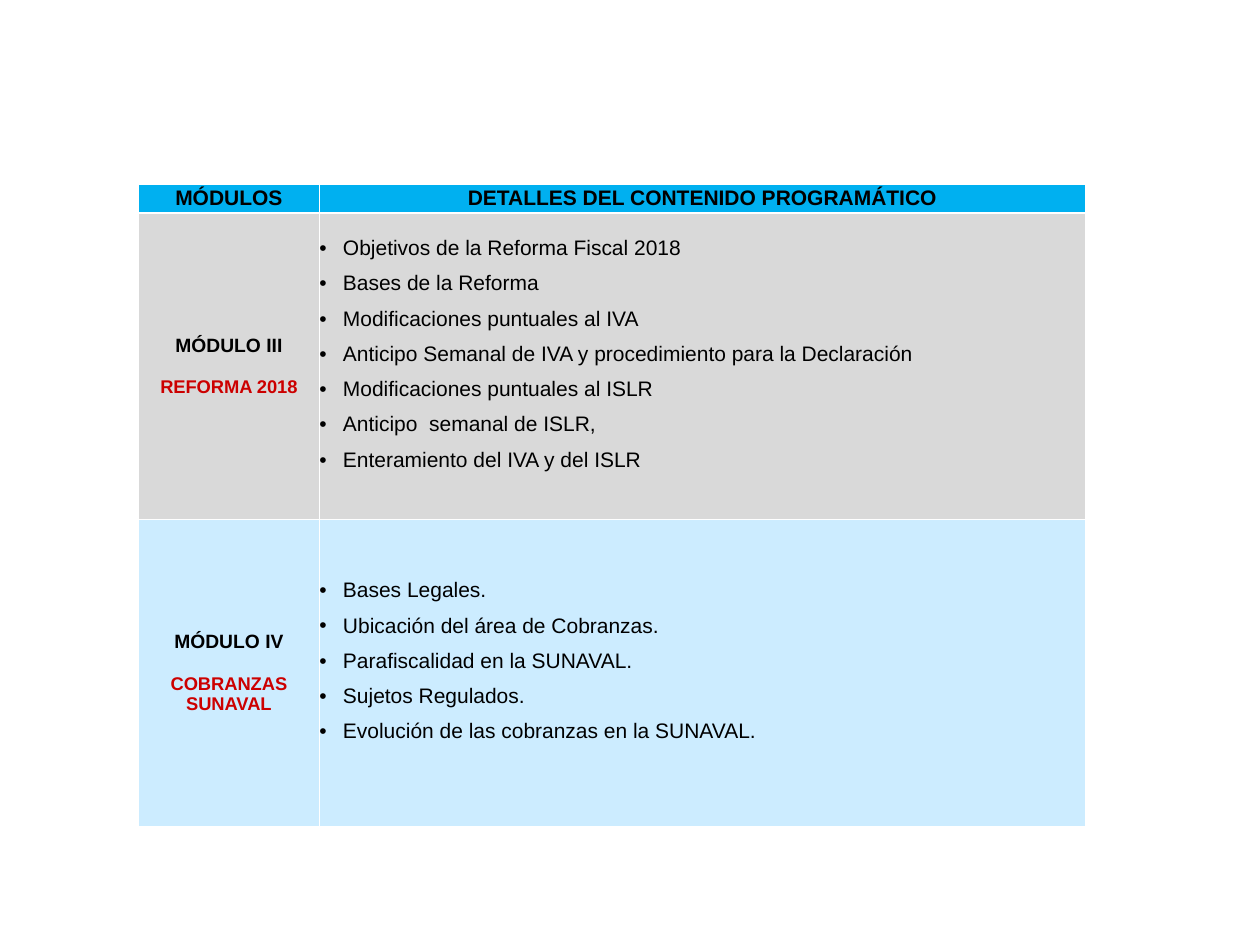
from lxml.etree import SubElement
from pptx import Presentation
from pptx.dml.color import RGBColor
from pptx.enum.text import MSO_ANCHOR, PP_ALIGN
from pptx.oxml.ns import qn
from pptx.util import Pt

HEADINGS = ["MÓDULOS", "DETALLES DEL CONTENIDO PROGRAMÁTICO"]
HEADING_FILL = "00B0F0"
MODULES = [
    {
        "name": "MÓDULO III",
        "subject": "REFORMA 2018",
        "fill": "D9D9D9",
        "align": PP_ALIGN.LEFT,
        "topics": [
            "Objetivos de la Reforma Fiscal 2018",
            "Bases de la Reforma",
            "Modificaciones puntuales al IVA",
            "Anticipo Semanal de IVA y procedimiento para la Declaración",
            "Modificaciones puntuales al ISLR",
            "Anticipo  semanal de ISLR,",
            "Enteramiento del IVA y del ISLR",
        ],
    },
    {
        "name": "MÓDULO IV",
        "subject": "COBRANZAS SUNAVAL",
        "fill": "CCECFF",
        "align": PP_ALIGN.JUSTIFY,
        "topics": [
            "Bases Legales.",
            "Ubicación del área de Cobranzas.",
            "Parafiscalidad en la SUNAVAL.",
            "Sujetos Regulados.",
            "Evolución de las cobranzas en la SUNAVAL.",
        ],
    },
]
LEFT, TOP = 79.2, 105.2
COLUMN_WIDTHS = [103.3, 437.9]
ROW_HEIGHTS = [16.6, 175, 175.8]
BULLET_INDENT = 13.5
TOPIC_BOTTOM_MARGIN = 20.6


def color(value):
    return RGBColor.from_string(value)


def add_text(cell, text, size=12, ink="000000", bold=False, align=PP_ALIGN.CENTER,
             before=None, spacing=None, bullet=False):
    frame = cell.text_frame
    para = frame.add_paragraph() if frame.text else frame.paragraphs[0]
    if bullet:
        properties = para._p.get_or_add_pPr()
        properties.set("marL", str(Pt(BULLET_INDENT)))
        properties.set("indent", str(-Pt(BULLET_INDENT)))
        SubElement(properties, qn("a:buFont")).set("typeface", "Arial")
        SubElement(properties, qn("a:buChar")).set("char", "•")
    para.alignment = align
    if before:
        para.space_before = Pt(before)
    if spacing:
        para.line_spacing = spacing
    span = para.add_run()
    span.text = text
    span.font.name = "Arial"
    span.font.size = Pt(size)
    span.font.bold = bold
    span.font.color.rgb = color(ink)


def format_cell(cell, fill):
    cell.margin_left = cell.margin_right = cell.margin_top = cell.margin_bottom = 0
    cell.vertical_anchor = MSO_ANCHOR.MIDDLE
    properties = cell._tc.get_or_add_tcPr()
    for side in ("L", "R", "T", "B"):
        border = SubElement(properties, qn(f"a:ln{side}"), w=str(Pt(1)))
        line_fill = SubElement(border, qn("a:solidFill"))
        SubElement(line_fill, qn("a:srgbClr"), val="FFFFFF")
    cell.fill.solid()
    cell.fill.fore_color.rgb = color(fill)


deck = Presentation()
deck.slide_width, deck.slide_height = Pt(720), Pt(540)
page = deck.slides.add_slide(deck.slide_layouts[6])
table = page.shapes.add_table(
    len(ROW_HEIGHTS), len(COLUMN_WIDTHS), Pt(LEFT), Pt(TOP),
    Pt(sum(COLUMN_WIDTHS)), Pt(sum(ROW_HEIGHTS)),
).table
table.first_row = table.horz_banding = False
for column, width in zip(table.columns, COLUMN_WIDTHS):
    column.width = Pt(width)
for row, height in zip(table.rows, ROW_HEIGHTS):
    row.height = Pt(height)

fills = [HEADING_FILL] + [module["fill"] for module in MODULES]
for row, fill in zip(table.rows, fills):
    for cell in row.cells:
        format_cell(cell, fill)

for cell, heading in zip(table.rows[0].cells, HEADINGS):
    add_text(cell, heading, bold=True)

for index, module in enumerate(MODULES, start=1):
    name_cell, topic_cell = table.rows[index].cells
    add_text(name_cell, module["name"], size=11, bold=True)
    add_text(name_cell, module["subject"], size=10.5, ink="CC0000", bold=True, before=12)
    topic_cell.margin_bottom = Pt(TOPIC_BOTTOM_MARGIN)
    for topic in module["topics"]:
        add_text(topic_cell, topic, align=module["align"], spacing=1.5, bullet=True)

deck.save("out.pptx")
